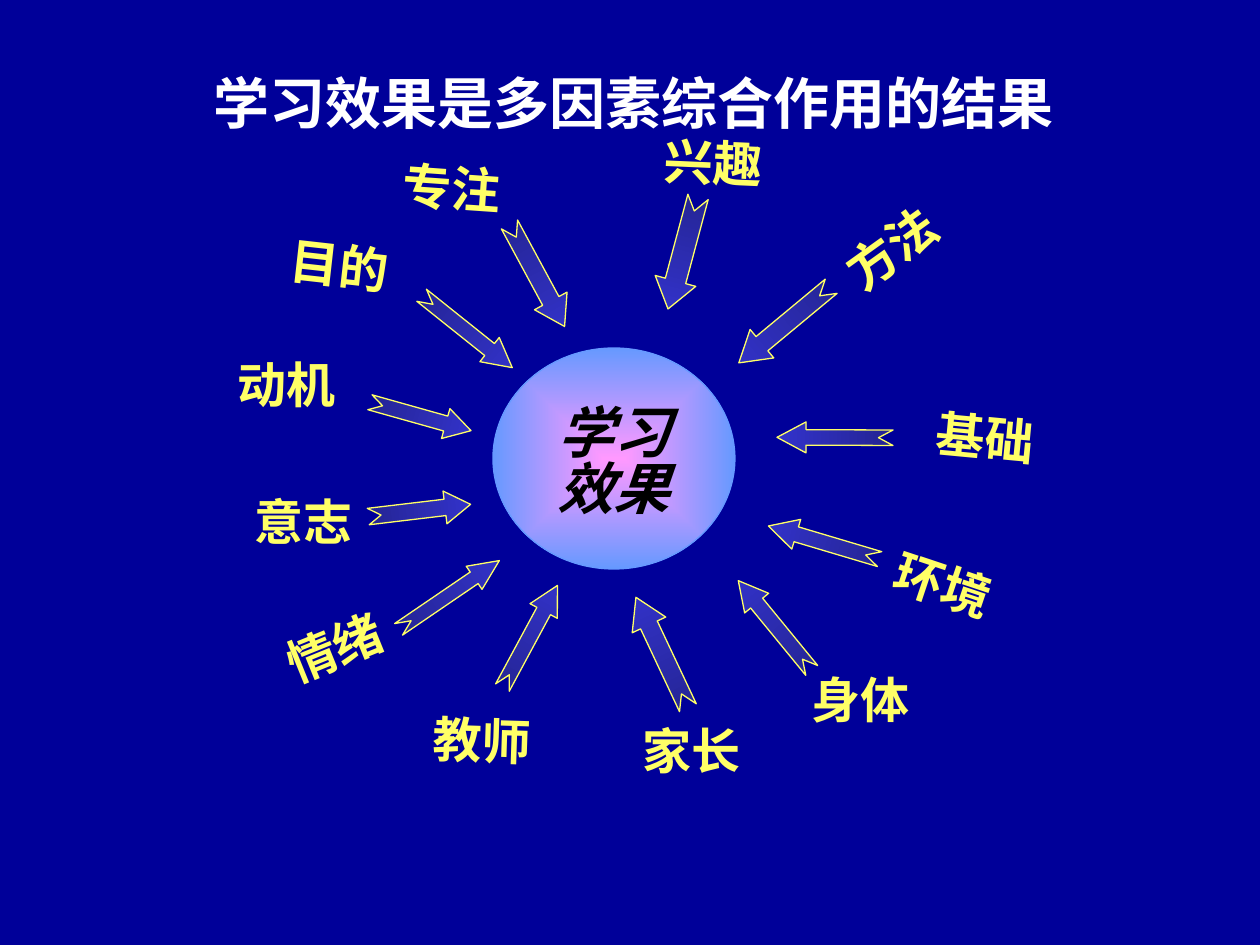
from lxml.etree import SubElement
from pptx import Presentation
from pptx.dml.color import RGBColor
from pptx.enum.shapes import MSO_SHAPE
from pptx.enum.text import MSO_ANCHOR, PP_ALIGN
from pptx.oxml.ns import qn
from pptx.util import Emu, Pt

SCALE = 914400 / 126
BACKGROUND, WHITE, BLACK, YELLOW = "000099", "FFFFFF", "000000", "FFFF66"
CJK_FONT, LATIN_FONT = "Noto Sans CJK SC", "Times New Roman"
LABEL_HEIGHT = 72

# text, left, top, width, rotation
LABELS = [
    ("动机", 199, 348, 175, -0.2),
    ("目的", 252, 229, 175, 6.4),
    ("专注", 358, 151, 188, 4),
    ("兴趣", 651, 126, 125, 2.5),
    ("方法", 830, 212, 123, -35.7),
    ("基础", 912, 401, 146, 5.5),
    ("环境", 882, 548, 123, 18.5),
    ("身体", 799, 663, 123, 0.2),
    ("意志", 242, 485, 123, 0),
    ("情绪", 273, 611, 123, -22.1),
    ("教师", 408, 704, 149, 1.9),
    ("家长", 630, 714, 123, 0.2),
]

# left, top, width, height, rotation
ARROWS = [
    (368, 401, 105, 31, 15.7),
    (409, 316, 116, 31, 38.6),
    (479, 257, 116, 37, 61.6),
    (625, 232, 116, 42, 105),
    (725, 306, 120, 37, 140.3),
    (777, 422, 116, 31, 180.2),
    (766, 527, 116, 31, 196.6),
    (717, 610, 116, 31, 230.7),
    (368, 494, 103, 33, 353.2),
    (388, 581, 122, 28, 325.7),
    (472, 621, 116, 31, 298.3),
    (601, 634, 122, 37, 244.8),
]


def px(length):
    return Emu(round(length * SCALE))


def color(hex_string):
    return RGBColor.from_string(hex_string)


def write(shape, text, *, size, ink, font=LATIN_FONT, italic=False, spacing=None):
    """Fill the shape with bold centred text, one paragraph per line."""
    frame = shape.text_frame
    frame.word_wrap = False
    frame.vertical_anchor = MSO_ANCHOR.MIDDLE
    for index, line in enumerate(text.split("\n")):
        para = frame.add_paragraph() if index else frame.paragraphs[0]
        para.alignment = PP_ALIGN.CENTER
        para.line_spacing = spacing
        span = para.add_run()
        span.text = line
        span.font.size = Pt(size)
        span.font.name = font
        span.font.bold = True
        span.font.italic = italic
        span.font.color.rgb = color(ink)
        east_asian = SubElement(span.font._element, qn("a:ea"))
        east_asian.set("typeface", CJK_FONT)


class Painter:
    """Holds the current slide and the style of its elements."""

    def __init__(self, page):
        self.page = page
        page.background.fill.solid()
        page.background.fill.fore_color.rgb = color(BACKGROUND)

    def label(self, text, left, top, width, height, rotation=0, **style):
        box = self.page.shapes.add_textbox(px(left), px(top), px(width), px(height))
        box.rotation = rotation
        write(box, text, **style)

    def gradient_shape(self, kind, bounds, stops, outline):
        shape = self.page.shapes.add_shape(kind, *map(px, bounds))
        shape.shadow.inherit = False
        shape.fill.gradient()
        shape.fill.gradient_angle = 0
        for stop, hex_string in zip(shape.fill.gradient_stops, stops):
            stop.color.rgb = color(hex_string)
        shape.line.color.rgb = color(outline)
        shape.line.width = Pt(0.75)
        return shape

    def arrow(self, left, top, width, height, rotation):
        """Notched arrow whose head takes a quarter of its length."""
        arrow = self.gradient_shape(MSO_SHAPE.NOTCHED_RIGHT_ARROW,
                                    (left, top, width, height),
                                    ("242492", "3333CC"), YELLOW)
        arrow.adjustments[0] = 0.5
        arrow.adjustments[1] = width / 4 / height
        arrow.rotation = rotation

    def hub(self, text, *bounds):
        """Central ellipse with a gradient that spreads from its middle."""
        hub = self.gradient_shape(MSO_SHAPE.OVAL, bounds, ("FF99FF", "6699FF"), "6699FF")
        gradient = hub._element.spPr.find(qn("a:gradFill"))
        gradient.remove(gradient.find(qn("a:lin")))
        spread = SubElement(gradient, qn("a:path"))
        spread.set("path", "shape")
        center = SubElement(spread, qn("a:fillToRect"))
        for side in "ltrb":
            center.set(side, "50000")
        write(hub, text, size=32, ink=BLACK, italic=True, spacing=0.83)
        hub.text_frame.margin_top = px(18)


def main():
    deck = Presentation()
    deck.slide_width, deck.slide_height = px(1260), px(945)
    painter = Painter(deck.slides.add_slide(deck.slide_layouts[6]))
    painter.label("学习效果是多因素综合作用的结果", 200, 63, 868, 79,
                  size=32, ink=WHITE, font=CJK_FONT)
    painter.hub("学习\n效果", 493, 348, 242, 221)
    for arrow in ARROWS:
        painter.arrow(*arrow)
    for text, left, top, width, rotation in LABELS:
        painter.label(text, left, top, width, LABEL_HEIGHT, rotation, size=28, ink=YELLOW)
    deck.save("out.pptx")


if __name__ == "__main__":
    main()
